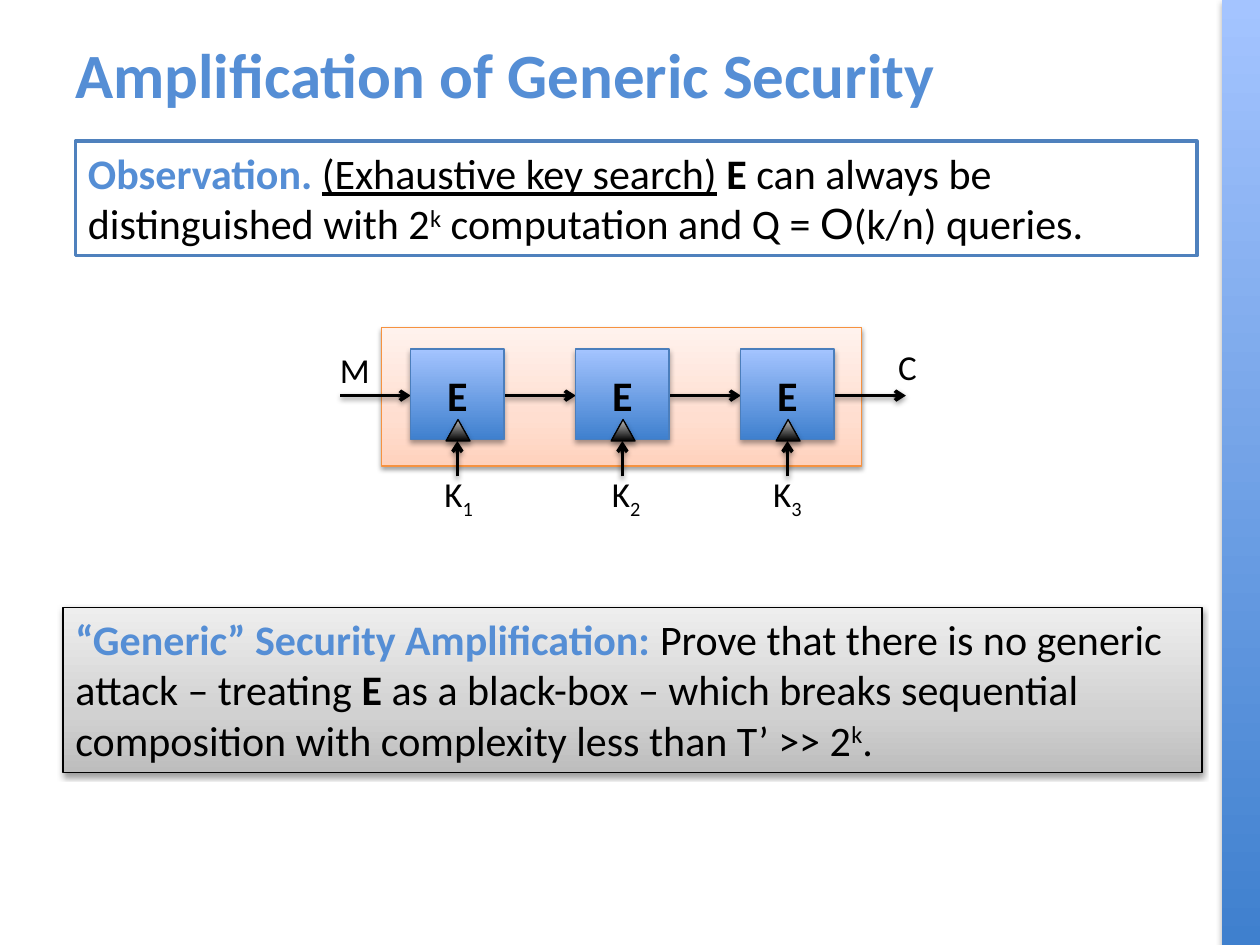
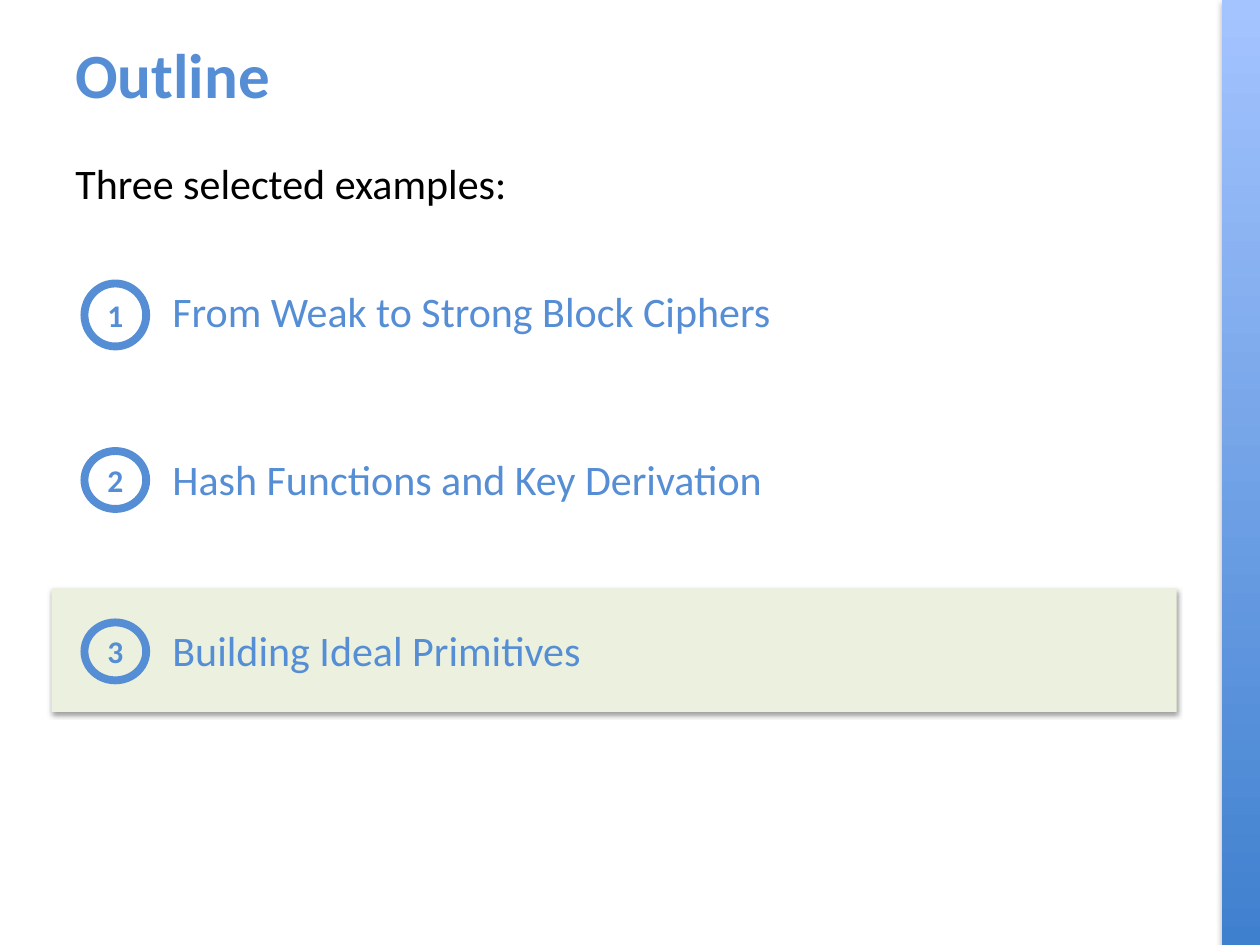
import pptx
import pptx.util
import pptx.dml.color
import pptx.enum.shapes
import pptx.enum.text
import pptx.oxml
import pptx.oxml.ns
from lxml import etree

Inches = pptx.util.Inches
Pt = pptx.util.Pt
Kind = pptx.enum.shapes.MSO_SHAPE
Align = pptx.enum.text.PP_ALIGN
Anchor = pptx.enum.text.MSO_ANCHOR
qn = pptx.oxml.ns.qn

# Shared look
FONT = "Calibri"
BLUE = "558ED5"
EDGE = "4B7EBC"
BLACK = "000000"
BLUES = [(0, "3F80CE"), (100, "A4C4FF")]
DARKS = [(0, BLACK), (100, "BDBDBD")]
GREYS = [(0, "BDBDBD"), (35, "D1D1D1"), (100, "EEEEEE")]
PEACH = [(0, "FFD2BD"), (35, "FFDED0"), (100, "FFF2ED")]
SOFT = (38, 1.6)    # shadow opacity in percent, distance in points
DEEP = (35, 1.8)


def color(code):
    return pptx.dml.color.RGBColor.from_string(code)


def add_color(parent, code):
    return etree.SubElement(parent, qn("a:srgbClr"), val=code)


def blend(shape, stops):
    """Fill with a gradient that runs from bottom to top."""
    shape.fill.gradient()
    shape.fill.gradient_angle = 90
    group = shape._element.spPr.find(qn("a:gradFill")).find(qn("a:gsLst"))
    for old in list(group):
        group.remove(old)
    for place, code in stops:
        add_color(etree.SubElement(group, qn("a:gs"), pos=str(place * 1000)), code)


def shade(item, look):
    """Give a shape or connector a downward shadow, or none."""
    props = item._element.spPr
    list_ = props.find(qn("a:effectLst"))
    if list_ is None:
        list_ = etree.SubElement(props, qn("a:effectLst"))
    if look:
        alpha, dist = look
        cast = etree.SubElement(list_, qn("a:outerShdw"), blurRad=str(Pt(3.1)),
                                dist=str(Pt(dist)), dir="5400000", rotWithShape="0")
        tint = add_color(cast, BLACK)
        etree.SubElement(tint, qn("a:alpha"), val=str(alpha * 1000))


def write(shape, text, size=24, tone=BLACK, bold=False, align=Align.LEFT,
          anchor=Anchor.TOP, grow=False):
    """Write a string, or a list of strings and (string, changes) pairs."""
    frame = shape.text_frame
    frame.word_wrap = True
    frame.vertical_anchor = anchor
    if grow:
        frame.auto_size = pptx.enum.text.MSO_AUTO_SIZE.SHAPE_TO_FIT_TEXT
    para = frame.paragraphs[0]
    para.alignment = align
    for part in [text] if isinstance(text, str) else text:
        words, change = (part, {}) if isinstance(part, str) else part
        run = para.add_run()
        run.text = words
        font = run.font
        font.name = change.get("font", FONT)
        font.size = Pt(size)
        font.bold = change.get("bold", bold)
        font.underline = change.get("under", False)
        font.color.rgb = color(change.get("tone", tone))
        if "base" in change:
            run._r.get_or_add_rPr().set("baseline", str(change["base"] * 1000))


def add_text(slide, box, text, **form):
    shape = slide.shapes.add_textbox(*map(Inches, box))
    write(shape, text, **form)


def add_shape(slide, kind, box, fill=None, line=None, width=0.75, cast=None):
    shape = slide.shapes.add_shape(kind, *map(Inches, box))
    shape.shadow.inherit = False
    if isinstance(fill, list):
        blend(shape, fill)
    elif fill:
        shape.fill.solid()
        shape.fill.fore_color.rgb = color(fill)
    else:
        shape.fill.background()
    if line:
        shape.line.color.rgb = color(line)
        shape.line.width = Pt(width)
    else:
        shape.line.fill.background()
    shade(shape, cast)
    return shape


def add_arrow(slide, *ends):
    straight = pptx.enum.shapes.MSO_CONNECTOR.STRAIGHT
    arrow = slide.shapes.add_connector(straight, *map(Inches, ends))
    arrow.line.color.rgb = color(BLACK)
    arrow.line.width = Pt(2)
    etree.SubElement(arrow.line._get_or_add_ln(), qn("a:tailEnd"), type="arrow")
    shade(arrow, SOFT)


def add_slide(deck, title):
    """Start a slide with the side band and the title."""
    slide = deck.slides.add_slide(deck.slide_layouts[6])
    add_shape(slide, Kind.RECTANGLE, (9.7, 0, 0.3, 7.5), BLUES, cast=DEEP)
    add_text(slide, (0.5, 0.17, 9.04, 0.83), title, size=36, tone=BLUE,
             bold=True, anchor=Anchor.MIDDLE)
    return slide


def add_chain(slide):
    """Draw three keyed ciphers in a row, from M to C."""
    wide, gap, mid = 0.74, 0.56, 3.14
    step = 1.31
    label = dict(size=20, align=Align.CENTER, grow=True)
    add_shape(slide, Kind.RECTANGLE, (3.03, 2.6, 3.81, 1.1), PEACH, "F69240", cast=SOFT)
    for i in range(4):
        start = 2.7 + i * step
        add_arrow(slide, start, mid, start + gap, mid)
    for i, key in enumerate((3.39, 4.72, 6.0)):
        left = 3.26 + i * step
        core = left + wide / 2
        block = add_shape(slide, Kind.RECTANGLE, (left, 2.77, wide, 0.72),
                          BLUES, EDGE, cast=DEEP)
        write(block, "E", bold=True, align=Align.CENTER, anchor=Anchor.MIDDLE)
        add_arrow(slide, core, 3.78, core, 3.5)
        add_text(slide, (key, 3.7, 0.5, 0.44), ["K", (str(i + 1), {"base": -25})], **label)
        add_shape(slide, Kind.ISOSCELES_TRIANGLE, (core - 0.09, 3.33, 0.19, 0.17),
                  DARKS, BLACK, cast=DEEP)
    add_text(slide, (2.6, 2.72, 0.3, 0.44), "M", **label)
    add_text(slide, (7.03, 2.69, 0.3, 0.44), "C", **label)


def add_item(slide, number, text, top, high):
    """Add a ringed number and its topic."""
    add_text(slide, (1.27, top, 8, 0.5), text, tone=BLUE, grow=True)
    ring = add_shape(slide, Kind.OVAL, (0.67, top + 0.03, 0.49, high),
                     line=BLUE, width=4.5)
    write(ring, str(number), size=18, tone=BLUE, bold=True,
          align=Align.CENTER, anchor=Anchor.MIDDLE)


def main():
    deck = pptx.Presentation()
    deck.slide_width, deck.slide_height = Inches(10), Inches(7.5)
    lead = {"tone": BLUE, "bold": True}
    bold = {"bold": True}
    power = ("k", {"base": 30})

    # Slide 1: the claim, the cipher chain and the goal
    slide = add_slide(deck, "Amplification of Generic Security")
    add_chain(slide)
    goal = add_shape(slide, Kind.RECTANGLE, (0.5, 4.82, 9.04, 1.31), GREYS, BLACK, cast=SOFT)
    write(goal, [("“Generic” Security Amplification:", lead),
                 " Prove that there is no generic attack – treating ", ("E ", bold),
                 "as a black-box – which breaks sequential composition "
                 "with complexity less than T’ >> 2", power, "."], grow=True)
    claim = add_shape(slide, Kind.RECTANGLE, (0.6, 1.12, 8.9, 0.91), "FFFFFF", "4F81BD", 2)
    write(claim, [("Observation. ", lead), ("(Exhaustive key search)", {"under": True}),
                  (" E ", bold), "can always be distinguished with 2", power,
                  " computation and Q = ", ("O", {"font": "Lato"}),
                  "(k/n) queries."], grow=True)

    # Slide 2: the outline, with the third topic marked
    slide = add_slide(deck, "Outline")
    add_shape(slide, Kind.RECTANGLE, (0.41, 4.67, 8.93, 0.98), "EBF1DE", cast=SOFT)
    add_text(slide, (0.5, 1.2, 8.7, 0.5), "Three selected examples:", grow=True)
    topics = [("From Weak to Strong Block Ciphers", 2.22, 0.5),
              ("Hash Functions and Key Derivation", 3.55, 0.46),
              ("Building Ideal Primitives", 4.91, 0.46)]
    for number, topic in enumerate(topics, 1):
        add_item(slide, number, *topic)

    deck.save("out.pptx")


if __name__ == "__main__":
    main()
